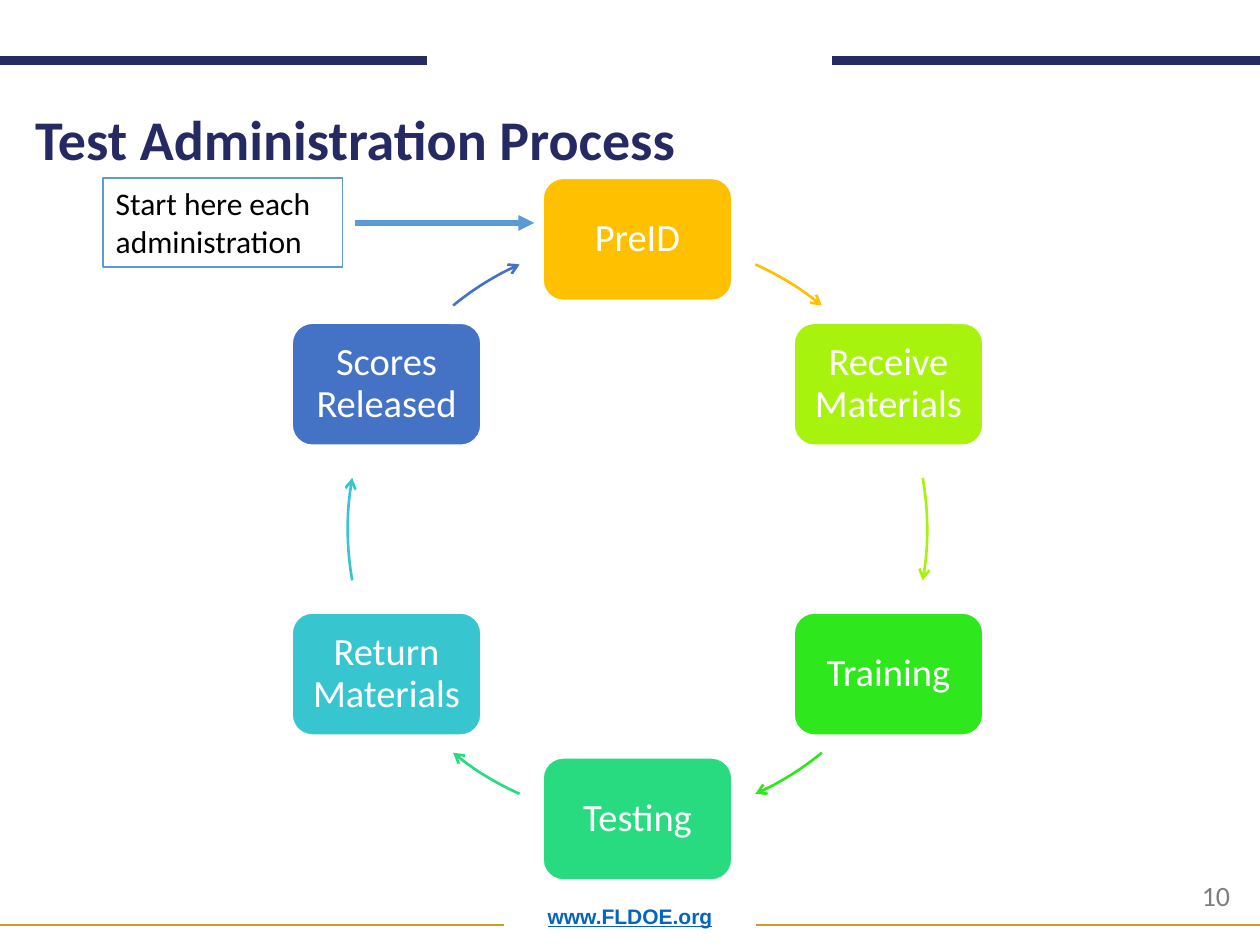
import math
from lxml import etree
from pptx import Presentation, util as u
from pptx.dml.color import RGBColor
from pptx.enum import shapes, text
from pptx.oxml.ns import qn

Inches, Pt = u.Inches, u.Pt


def rgb(color):
    return RGBColor.from_string(color)


def write(sp, words, size, color, font="Calibri", bold=None, align=text.PP_ALIGN.LEFT,
          anchor=text.MSO_ANCHOR.TOP, spacing=None):
    tf = sp.text_frame
    tf.word_wrap = True
    tf.vertical_anchor = anchor
    p = tf.paragraphs[0]
    p.alignment = align
    if spacing:
        p.line_spacing = spacing
    r = p.add_run()
    r.text = words
    r.font.name, r.font.size, r.font.bold = font, Pt(size), bold
    r.font.color.rgb = rgb(color)
    return r


prs = Presentation()
prs.slide_width, prs.slide_height = Inches(10), Inches(7.5)
s = prs.slides.add_slide(prs.slide_layouts[6])

# Footer address
sp = s.shapes.add_textbox(Inches(0.69), Inches(7), Inches(8.62), Inches(0.42))
r = write(sp, "www.FLDOE.org", 12, "0563C1", "Arial", True,
          text.PP_ALIGN.CENTER, text.MSO_ANCHOR.BOTTOM, 0.9)
r.font.underline = True

# Header bars, footer rules and the arrow to the starting step
for x1, x2, y, color, width, head in [
    (0, 4, 7.34, "CD9D2C", 1, None),
    (0, 3.39, 0.48, "262A63", 5, None),
    (6.6, 10, 0.48, "262A63", 5, None),
    (6, 10, 7.34, "CD9D2C", 1, None),
    (2.82, 4.24, 1.77, "5B9BD5", 3, "triangle"),
]:
    line = s.shapes.add_connector(shapes.MSO_CONNECTOR.STRAIGHT,
                                  Inches(x1), Inches(y), Inches(x2), Inches(y))
    line.line.color.rgb = rgb(color)
    line.line.width = Pt(width)
    if head:
        etree.SubElement(line.line._get_or_add_ln(), qn("a:tailEnd"), type=head)
    etree.SubElement(line._element.spPr, qn("a:effectLst"))

# Slide number
sp = s.shapes.add_textbox(Inches(9.44), Inches(6.92), Inches(0.52), Inches(0.37))
write(sp, "10", 16, "7F7F7F")

# Title
sp = s.shapes.add_textbox(Inches(0.18), Inches(0.79), Inches(8.62), Inches(0.63))
write(sp, "Test Administration Process", 32, "262A63", bold=True,
      anchor=text.MSO_ANCHOR.BOTTOM, spacing=0.9)

# Cycle: steps every 60 degrees clockwise from the top, an arc after each
cx, cy, radius = 5.06, 4.2, 2.3
box_w, box_h = 1.5, 0.97
steps = [
    ("PreID", "FFC000", 24, 39.5),
    ("Receive Materials", "A7F30E", 79.8, 100.2),
    ("Training", "2EE71C", 140.5, 156),
    ("Testing", "29DB80", 204, 219.5),
    ("Return Materials", "37C6CF", 259.8, 280.2),
    ("Scores Released", "4472C4", 320.5, 336),
]
for i, (label, color, start, end) in enumerate(steps):
    angle = math.radians(60 * i)
    x = cx + radius * math.sin(angle) - box_w / 2
    y = cy - radius * math.cos(angle) - box_h / 2
    sp = s.shapes.add_shape(shapes.MSO_SHAPE.ROUNDED_RECTANGLE,
                            Inches(x), Inches(y), Inches(box_w), Inches(box_h))
    sp.shadow.inherit = False
    sp.fill.solid()
    sp.fill.fore_color.rgb = rgb(color)
    sp.line.color.rgb = rgb("FFFFFF")
    sp.line.width = Pt(1)
    tf = sp.text_frame
    tf.margin_left = tf.margin_right = tf.margin_top = tf.margin_bottom = Inches(0.09)
    write(sp, label, 22, "FFFFFF", align=text.PP_ALIGN.CENTER,
          anchor=text.MSO_ANCHOR.MIDDLE, spacing=0.9)

    arc = s.shapes.add_shape(shapes.MSO_SHAPE.ARC, Inches(cx - radius), Inches(cy - radius),
                             Inches(2 * radius), Inches(2 * radius))
    arc.shadow.inherit = False
    arc.fill.background()
    # Arc angles run from 3 o'clock; one degree is 0.6 adjustment units
    for k, degrees in enumerate((start, end)):
        arc.adjustments[k] = (degrees - 90) % 360 * 0.6
    arc.line.color.rgb = rgb(color)
    arc.line.width = Pt(1.5)
    etree.SubElement(arc.line._get_or_add_ln(), qn("a:tailEnd"), type="arrow")

# Starting note
sp = s.shapes.add_shape(shapes.MSO_SHAPE.RECTANGLE,
                        Inches(0.82), Inches(1.41), Inches(1.9), Inches(0.71))
sp.shadow.inherit = False
sp.fill.solid()
sp.fill.fore_color.rgb = rgb("FFFFFF")
sp.line.color.rgb = rgb("5B9BD5")
sp.line.width = Pt(1)
write(sp, "Start here each administration", 18, "000000")

prs.save("out.pptx")
